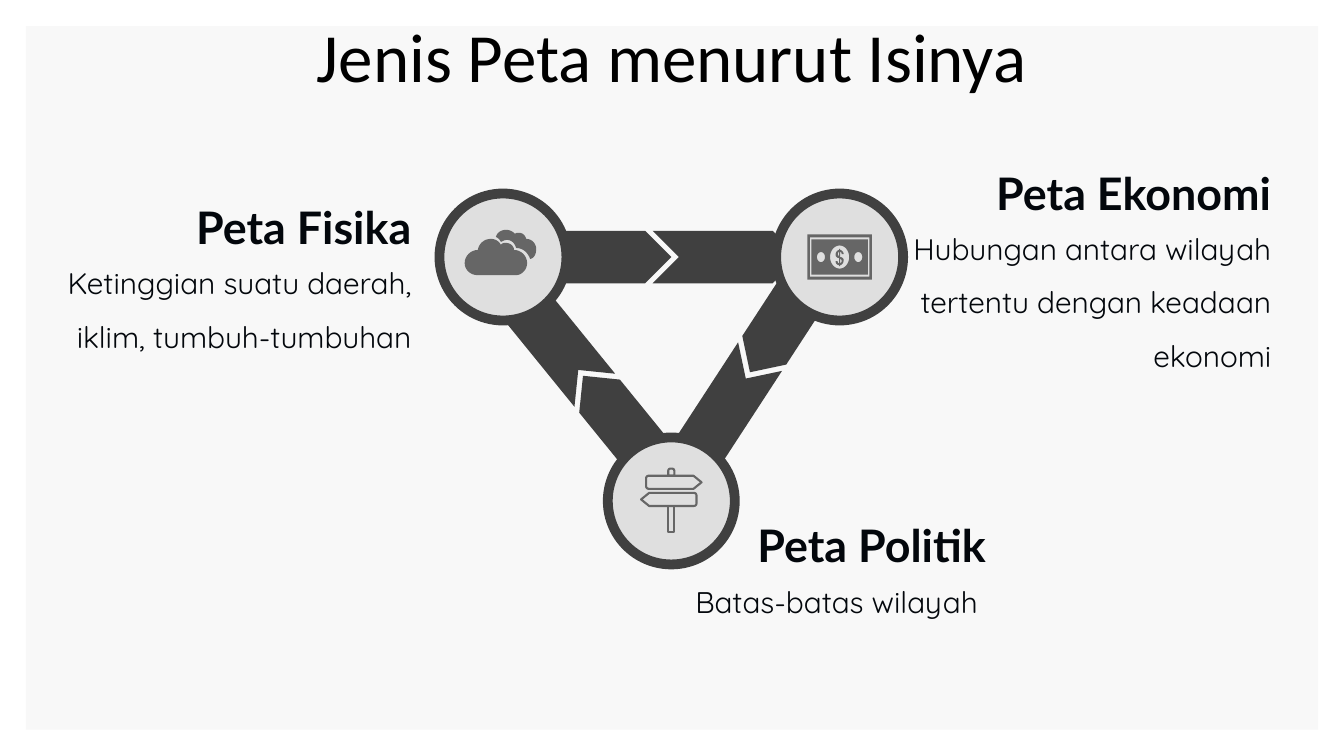
import math
from dataclasses import dataclass
from typing import Any

import pptx
import pptx.dml.color
import pptx.enum.shapes
import pptx.enum.text
import pptx.util

SHAPE = pptx.enum.shapes.MSO_SHAPE
ALIGN = pptx.enum.text.PP_ALIGN
FIT = pptx.enum.text.MSO_AUTO_SIZE

# The grid has square cells; all places and lengths below count cells.
CELL = pptx.util.Inches(0.1)
COLS, ROWS = 133.33, 75

Point = tuple[float, float]
Path = list[tuple[float, ...]]  # each step: 2 numbers a corner, 6 a curve


@dataclass(frozen=True)
class Theme:
    paper: str = "F8F8F8"
    dark: str = "404040"
    disc: str = "DFDFDF"
    icon: str = "666666"
    ink: str = "03070C"
    black: str = "000000"
    title: float = 49.3
    head: float = 32
    body: float = 21.3
    ring: float = 7
    thin: float = 1.5


@dataclass(frozen=True)
class Arrow:
    mid: Point
    turn: float


@dataclass(frozen=True)
class Label:
    left: float
    top: float
    head: str
    body: str
    high: float
    lead: float = 1.5


THEME = Theme()
WIDE = 37.8
FISIKA, POLITIK, EKONOMI = (49.9, 25.5), (66.6, 49.7), (83.3, 25.5)
ARROWS = [
    Arrow((62, 42.4), 230.9),
    Arrow((78, 31.4), 123.1),
    Arrow((60, 25.5), 0),
]
LABELS = [
    Label(4, 19.3, "Peta Fisika", "Ketinggian suatu daerah, iklim, tumbuh-tumbuhan", 11.8),
    Label(89.3, 15.9, "Peta Ekonomi",
          "Hubungan antara wilayah tertentu dengan keadaan ekonomi", 17.2),
    Label(61, 50.9, "Peta Politik", "Batas-batas wilayah ", 6.4),
]

# Icon paths are measured from the centre of their disc.
CLOUDS: list[Path] = [
    [(-1.2, -1.8), (-0.8, -1.8, -0.4, -1.6, -0.2, -1.2), (-0.1, -1.4, 0.1, -1.4, 0.3, -1.4),
     (0.7, -1.4, 1.1, -1.1, 1.1, -0.7), (1.8, -0.7, 2.4, -0.1, 2.4, 0.6),
     (2.4, 1.2, 1.9, 1.8, 1.3, 1.8), (-2.5, 1.8), (-3.2, 1.8, -3.8, 1.3, -3.8, 0.6),
     (-3.8, -0.1, -3.2, -0.7, -2.5, -0.7), (-2.4, -1.3, -1.9, -1.8, -1.2, -1.8)],
    [(0.3, -2.7), (0.7, -2.7, 1, -2.5, 1.2, -2.3), (1.3, -2.4, 1.4, -2.4, 1.6, -2.4),
     (1.9, -2.4, 2.2, -2.2, 2.3, -1.8), (2.9, -1.8, 3.3, -1.3, 3.3, -0.8),
     (3.3, -0.3, 3.1, 0.1, 2.7, 0.2), (2.5, -0.4, 2, -0.9, 1.3, -0.9),
     (1.2, -1.3, 0.9, -1.7, 0.4, -1.7), (0.2, -1.7, 0, -1.6, -0.2, -1.5),
     (-0.3, -1.7, -0.5, -1.9, -0.7, -2), (-0.6, -2.4, -0.2, -2.7, 0.3, -2.7)],
]
DOLLAR: list[Path] = [
    [(-0.05, -0.8), (0.05, -0.8), (0.05, -0.7), (0.2, -0.7, 0.4, -0.5, 0.4, -0.3),
     (0.2, -0.3), (0.2, -0.5, 0.1, -0.5, 0.05, -0.5), (0.05, 0),
     (0.2, 0, 0.4, 0.1, 0.4, 0.3), (0.4, 0.6, 0.2, 0.8, 0.05, 0.8), (0.05, 0.9),
     (-0.05, 0.9), (-0.05, 0.8), (-0.3, 0.8, -0.4, 0.6, -0.4, 0.4), (-0.2, 0.4),
     (-0.2, 0.6, -0.1, 0.6, -0.05, 0.6), (-0.05, 0.1),
     (-0.2, 0.1, -0.4, 0, -0.4, -0.25), (-0.4, -0.5, -0.2, -0.7, -0.05, -0.7)],
    [(0.05, 0.2), (0.05, 0.6), (0.25, 0.6, 0.25, 0.2, 0.05, 0.2)],
    [(-0.05, -0.5), (-0.25, -0.5, -0.2, -0.1, -0.05, -0.1)],
]
BOARD: Path = [(2.2, -2.5), (-2.2, -2.5), (-2.4, -2.5, -2.5, -2.4, -2.5, -2.2),
               (-2.5, -1.5), (-2.5, -1.3, -2.4, -1.2, -2.2, -1.2), (2.2, -1.2), (3, -1.85)]
CAP: Path = [(0.3, -2.5), (0.3, -3), (0.3, -3.1, 0.2, -3.2, 0.1, -3.2), (-0.1, -3.2),
             (-0.2, -3.2, -0.3, -3.1, -0.3, -3), (-0.3, -2.5)]


def span(cells: float) -> int:
    return round(cells * CELL)


def apply(target: Any, look: dict[str, Any]) -> None:
    for name, value in look.items():
        setattr(target, name, value)


def tint(text: str) -> pptx.dml.color.RGBColor:
    return pptx.dml.color.RGBColor.from_string(text)


def paint(shape: Any, fill: str = "", line: str = "", width: float = 0) -> None:
    shape.shadow.inherit = False
    for part, color in ((shape.fill, fill), (shape.line.fill, line)):
        if color:
            part.solid()
            part.fore_color.rgb = tint(color)
        else:
            part.background()
    if line:
        shape.line.width = pptx.util.Pt(width)


def place(shapes: Any, kind: Any, mid: Point, wide: float, high: float) -> Any:
    """Add a preset shape centred on mid."""
    return shapes.add_shape(kind, span(mid[0] - wide / 2), span(mid[1] - high / 2),
                            span(wide), span(high))


def rect(x: float, y: float, mid: float = 0) -> Path:
    return [(-x, mid - y), (x, mid - y), (x, mid + y), (-x, mid + y)]


def oval(x: float, y: float, mid: float = 0) -> Path:
    turns = [math.tau * step / 32 for step in range(32)]
    return [(mid + x * math.cos(turn), y * math.sin(turn)) for turn in turns]


def trace(steps: Path) -> list[Point]:
    """Turn corners and cubic curves into a row of points."""
    points: list[Point] = []
    for step in steps:
        if len(step) == 2:
            points.append((step[0], step[1]))
            continue
        knots = [points[-1], step[0:2], step[2:4], step[4:6]]
        for part in range(1, 9):
            t = part / 8
            mix = [math.comb(3, k) * t**k * (1 - t) ** (3 - k) for k in range(4)]
            points.append((sum(m * p[0] for m, p in zip(mix, knots)),
                           sum(m * p[1] for m, p in zip(mix, knots))))
    return points


def icon(shapes: Any, mid: Point, paths: list[Path], **look: Any) -> None:
    """Draw closed paths as one shape; nested paths cut holes."""
    rows = [[(span(mid[0] + x), span(mid[1] + y)) for x, y in trace(one)] for one in paths]
    pen = shapes.build_freeform(*rows[0][0])
    for index, row in enumerate(rows):
        if index:
            pen.move_to(*row[0])
        pen.add_line_segments(row[1:], close=True)
    paint(pen.convert_to_shape(), **look)


def write(frame: Any, text: str, font: dict[str, Any], color: str, para: dict[str, Any]) -> None:
    frame.word_wrap = True
    line = frame.paragraphs[0]
    apply(line, para)
    run = line.add_run()
    run.text = text
    apply(run.font, font)
    run.font.color.rgb = tint(color)


def label(shapes: Any, item: Label) -> None:
    body = {"name": "Quicksand", "size": pptx.util.Pt(THEME.body)}
    head = {"name": "Lato", "size": pptx.util.Pt(THEME.head), "bold": True}
    for text, top, high, font, lead in (
        (item.body, item.top + 4.7, item.high, body, item.lead),
        (item.head, item.top, 6.4, head, 1.0),
    ):
        box = shapes.add_textbox(span(item.left), span(top), span(WIDE), span(high))
        write(box.text_frame, text, font, THEME.ink,
              {"alignment": ALIGN.RIGHT, "line_spacing": lead})
        box.text_frame.auto_size = FIT.SHAPE_TO_FIT_TEXT


def arrow(shapes: Any, item: Arrow) -> None:
    """Draw a pentagon and the chevron that follows it."""
    turn = math.radians(item.turn)
    for kind, wide, step in ((SHAPE.PENTAGON, 13.2, 0), (SHAPE.CHEVRON, 14.5, 12)):
        mid = (item.mid[0] + step * math.cos(turn), item.mid[1] + step * math.sin(turn))
        shape = place(shapes, kind, mid, wide, 5.2)
        shape.rotation = item.turn
        paint(shape, THEME.dark)


def heading(title: Any) -> None:
    title.element.getparent().append(title.element)
    apply(title, {"left": 0, "top": span(1.8), "width": span(COLS), "height": span(8.4)})
    apply(title.text_frame, {"auto_size": FIT.NONE,
                             "vertical_anchor": pptx.enum.text.MSO_ANCHOR.MIDDLE})
    write(title.text_frame, "Jenis Peta menurut Isinya",
          {"name": "Calibri", "size": pptx.util.Pt(THEME.title)}, THEME.black,
          {"alignment": ALIGN.CENTER, "line_spacing": 0.9, "space_before": pptx.util.Pt(9)})


def main() -> None:
    deck = pptx.Presentation()
    apply(deck, {"slide_width": span(COLS), "slide_height": span(ROWS)})
    shapes = deck.slides.add_slide(deck.slide_layouts[5]).shapes
    paint(place(shapes, SHAPE.RECTANGLE, (COLS / 2, ROWS / 2), 128.2, 69.8), THEME.paper)
    for item in ARROWS:
        arrow(shapes, item)
    heading(shapes.title)
    for mid in (FISIKA, POLITIK, EKONOMI):
        paint(place(shapes, SHAPE.OVAL, mid, 12.6, 12.6), THEME.disc, THEME.dark, THEME.ring)
    for item in LABELS:
        label(shapes, item)
    icon(shapes, FISIKA, CLOUDS, fill=THEME.icon)
    note = [rect(3.2, 2.25), rect(2.95, 1.95), rect(2.8, 1.75), oval(0.95, 1.15),
            oval(0.4, 0.5, -1.85), oval(0.4, 0.5, 1.85)]
    icon(shapes, EKONOMI, note + DOLLAR, fill=THEME.icon)
    lower = trace([(-x, y + 1.7) for x, y in trace(BOARD)])
    for part in (BOARD, lower, CAP, rect(0.3, 1.3, 1.8)):
        icon(shapes, POLITIK, [part], line=THEME.icon, width=THEME.thin)
    deck.save("out.pptx")


if __name__ == "__main__":
    main()
